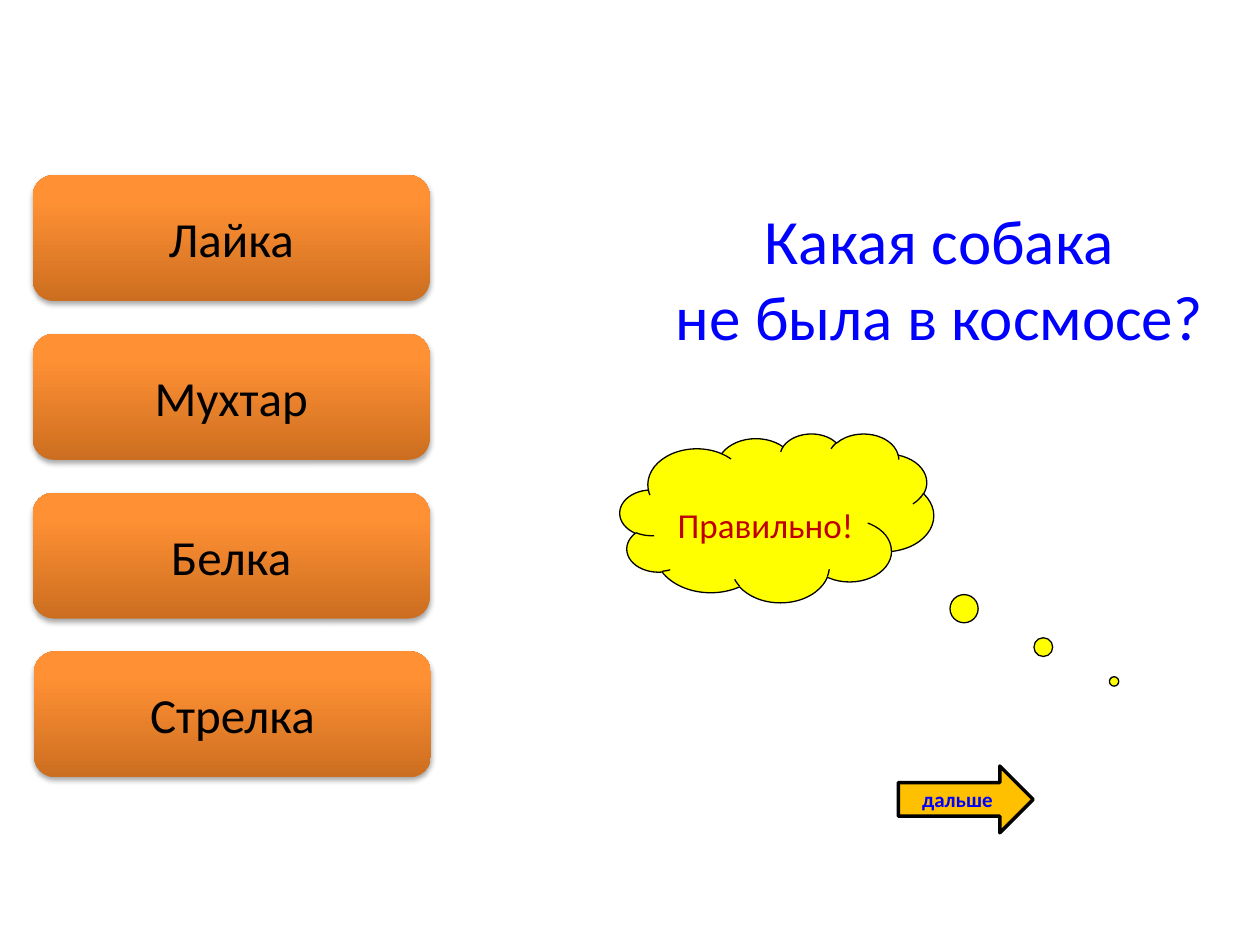
from dataclasses import dataclass

from lxml.etree import SubElement
from pptx import Presentation
from pptx.dml.color import RGBColor
from pptx.enum.shapes import MSO_SHAPE
from pptx.enum.text import MSO_ANCHOR, PP_ALIGN
from pptx.oxml import parse_xml
from pptx.oxml.ns import nsdecls, qn
from pptx.shapes.autoshape import Shape
from pptx.slide import Slide
from pptx.util import Inches, Pt

BLACK = RGBColor(0x00, 0x00, 0x00)
BLUE = RGBColor(0x00, 0x00, 0xFF)
RED = RGBColor(0xC0, 0x00, 0x00)
YELLOW = RGBColor(0xFF, 0xFF, 0x00)
AMBER = RGBColor(0xFF, 0xC0, 0x00)
ORANGE_STOPS = (
    (0, RGBColor(0xCC, 0x6E, 0x20)),
    (80, RGBColor(0xFF, 0x90, 0x34)),
    (100, RGBColor(0xFF, 0x91, 0x36)),
)
ANSWER_TOP, ANSWER_STEP = 1.39, 1.26


@dataclass(frozen=True)
class Answer:
    """One answer button and its left edge in inches."""

    label: str
    left: float = 0.26


ANSWERS = (
    Answer("Лайка"),
    Answer("Мухтар"),
    Answer("Белка"),
    Answer("Стрелка", 0.27),
)


def write(box: Shape, lines: tuple[str, ...], size: float, color: RGBColor,
          bold: bool = False, anchor: MSO_ANCHOR = MSO_ANCHOR.MIDDLE) -> None:
    """Write centred lines, one paragraph each."""
    frame = box.text_frame
    frame.word_wrap = True
    frame.vertical_anchor = anchor
    for index, line in enumerate(lines):
        para = frame.add_paragraph() if index else frame.paragraphs[0]
        para.alignment = PP_ALIGN.CENTER
        span = para.add_run()
        span.text = line
        span.font.name = "Calibri"
        span.font.size = Pt(size)
        span.font.bold = bold
        span.font.color.rgb = color


def add_outlined(page: Slide, kind: MSO_SHAPE, left: float, top: float,
                 width: float, height: float, fill: RGBColor, line: float) -> Shape:
    """Add a flat filled shape with a black outline."""
    shape = page.shapes.add_shape(
        kind, Inches(left), Inches(top), Inches(width), Inches(height))
    shape.shadow.inherit = False
    shape.fill.solid()
    shape.fill.fore_color.rgb = fill
    shape.line.color.rgb = BLACK
    shape.line.width = Pt(line)
    return shape


def add_answer(page: Slide, answer: Answer, top: float) -> None:
    """Add a rounded button with an orange gradient and a soft shadow."""
    button = page.shapes.add_shape(
        MSO_SHAPE.ROUNDED_RECTANGLE, Inches(answer.left), Inches(top),
        Inches(3.15), Inches(1))
    button.line.fill.background()
    button.fill.background()
    stops = "".join(
        f'<a:gs pos="{place * 1000}"><a:srgbClr val="{color}"/></a:gs>'
        for place, color in ORANGE_STOPS)
    gradient = parse_xml(
        f'<a:gradFill {nsdecls("a")} rotWithShape="1"><a:gsLst>{stops}</a:gsLst>'
        '<a:lin ang="16200000" scaled="0"/></a:gradFill>')
    properties = button._element.spPr
    properties.replace(properties.find(qn("a:noFill")), gradient)
    button.shadow.inherit = False
    shadow = SubElement(
        properties.find(qn("a:effectLst")), qn("a:outerShdw"),
        blurRad=str(Pt(3.1)), dist=str(Pt(1.8)), dir="5400000", rotWithShape="0")
    tint = SubElement(shadow, qn("a:srgbClr"), val=str(BLACK))
    SubElement(tint, qn("a:alpha"), val="35000")
    write(button, (answer.label,), 28, BLACK)


def main() -> None:
    """Build the quiz slide."""
    deck = Presentation()
    deck.slide_width, deck.slide_height = Inches(10), Inches(7.5)
    page = deck.slides.add_slide(deck.slide_layouts[6])

    cloud = add_outlined(
        page, MSO_SHAPE.CLOUD_CALLOUT, 4.92, 3.44, 2.49, 1.34, YELLOW, 0.75)
    cloud.adjustments[0] = 1.075
    cloud.adjustments[1] = 0.969
    cloud.text_frame.margin_top = Inches(0.35)
    write(cloud, ("Правильно!",), 20, RED, anchor=MSO_ANCHOR.TOP)

    arrow = add_outlined(
        page, MSO_SHAPE.RIGHT_ARROW, 7.13, 6.08, 1.07, 0.53, AMBER, 2)
    write(arrow, ("дальше",), 12, BLUE, bold=True)

    for index, answer in enumerate(ANSWERS):
        add_answer(page, answer, ANSWER_TOP + index * ANSWER_STEP)

    question = page.shapes.add_textbox(
        Inches(5.21), Inches(1.55), Inches(4.49), Inches(1.31))
    write(question, ("Какая собака", "не была в космосе?"), 36, BLUE,
          anchor=MSO_ANCHOR.TOP)

    deck.save("out.pptx")


if __name__ == "__main__":
    main()
